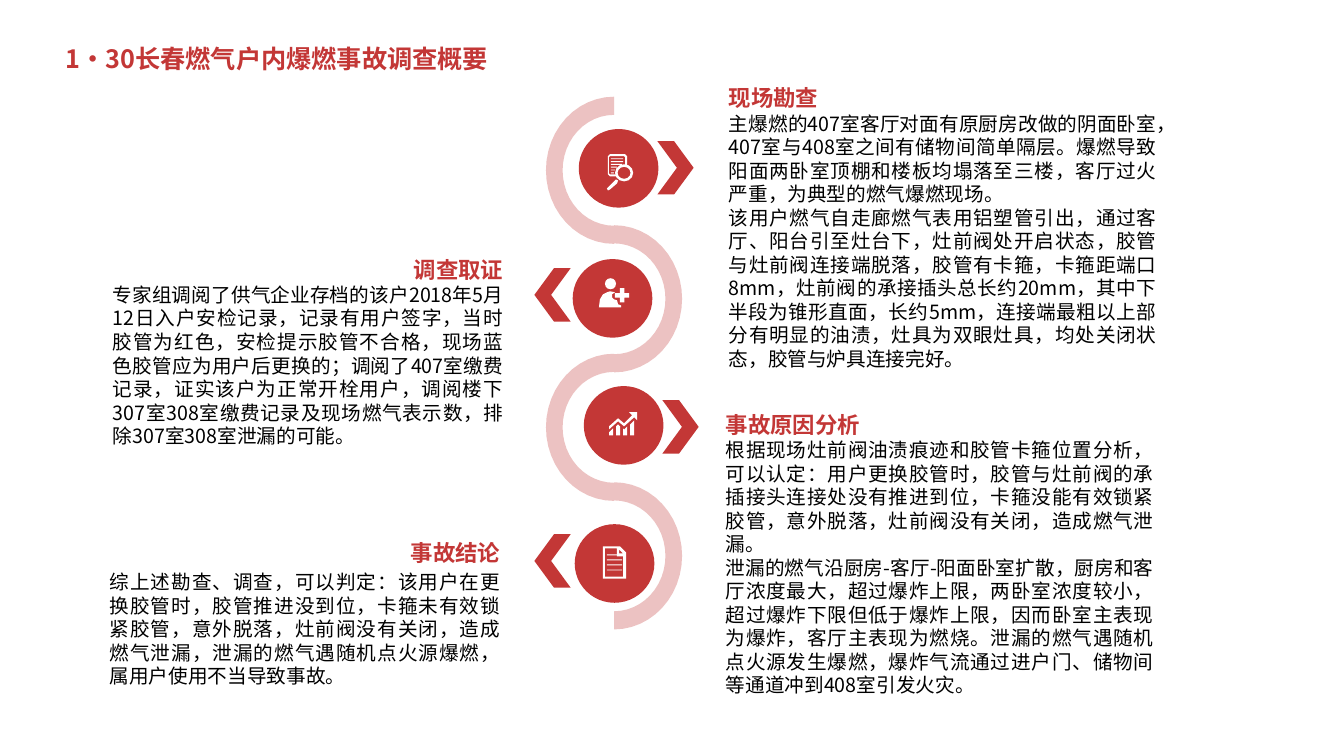
"""Builds a one-page accident investigation summary."""
import math
from dataclasses import dataclass

from lxml import etree
from pptx import Presentation
from pptx import util as u
from pptx.dml.color import RGBColor
from pptx.enum import shapes, text
from pptx.oxml.ns import qn


@dataclass
class Theme:
    """Holds the colours, font and type sizes."""
    red: str = "C33736"
    white: str = "FFFFFF"
    black: str = "000000"
    font: str = "Noto Sans CJK SC"
    title: int = 18
    heading: int = 16
    body: int = 14
    leading: float = 1.2


class SlideBuilder:
    """Draws styled elements on the current slide."""

    def __init__(self, page, theme):
        self.page = page
        self.theme = theme
        self.canvas = page.shapes

    def start_group(self):
        self.canvas = self.page.shapes.add_group_shape().shapes

    def end_group(self):
        self.canvas = self.page.shapes

    def paint(self, shape, color, alpha=None):
        shape.shadow.inherit = False
        shape.line.fill.background()
        shape.fill.solid()
        shape.fill.fore_color.rgb = RGBColor.from_string(color)
        if alpha is not None:
            tint = shape.fill._xPr.find(qn("a:solidFill"))[0]
            etree.SubElement(tint, qn("a:alpha"), val=str(alpha * 1000))

    def preset(self, kind, left, top, width, height, color, adjust=None, turn=0):
        shape = self.canvas.add_shape(kind, *map(u.Inches, (left, top, width, height)))
        if adjust is not None:
            shape.adjustments[0] = adjust
        shape.rotation = turn
        self.paint(shape, color)

    def outline(self, contours, color, alpha=None):
        scaled = [[(u.Inches(x), u.Inches(y)) for x, y in points] for points in contours]
        builder = self.canvas.build_freeform(*scaled[0][0])
        builder.add_line_segments(scaled[0][1:], close=True)
        for points in scaled[1:]:
            builder.move_to(*points[0])
            builder.add_line_segments(points[1:], close=True)
        self.paint(builder.convert_to_shape(), color, alpha)

    def style(self, para, size, color, bold, align):
        para.alignment = align
        para.line_spacing = u.Pt(size * self.theme.leading)
        for span in para.runs:
            span.font.size = u.Pt(size)
            span.font.bold = bold
            span.font.color.rgb = RGBColor.from_string(color)
            span.font.name = self.theme.font
            etree.SubElement(span.font._element, qn("a:ea"), typeface=self.theme.font)

    def text_box(self, left, top, width, height, heading, bodies=(),
                 align=text.PP_ALIGN.LEFT, size=None, before=0, after=0):
        box = self.canvas.add_textbox(*map(u.Inches, (left, top, width, height)))
        frame = box.text_frame
        frame.word_wrap = True
        frame.auto_size = text.MSO_AUTO_SIZE.SHAPE_TO_FIT_TEXT
        frame.text = heading
        self.style(frame.paragraphs[0], size or self.theme.heading,
                   self.theme.red, True, align)
        for body in bodies:
            para = frame.add_paragraph()
            para.text = body
            para.space_before, para.space_after = u.Pt(before), u.Pt(after)
            self.style(para, self.theme.body, self.theme.black, False,
                       text.PP_ALIGN.JUSTIFY)

    def ribbon(self, center_x, first_y, step, bends):
        outer, inner = (0.675, 0.73), (0.51, 0.55)
        edges = []
        for wide_side in (-1, 1):
            edge = []
            for bend in range(bends):
                side = 1 if bend % 2 else -1
                radius_x, radius_y = outer if side == wide_side else inner
                for tick in range(25):
                    angle = math.pi * tick / 24
                    edge.append((center_x + side * radius_x * math.sin(angle),
                                 first_y + step * bend - radius_y * math.cos(angle)))
            edges.append(edge)
        self.outline([edges[0] + edges[1][::-1]], self.theme.red, 30)

    def stage(self, circle, arrow, turn, icon):
        self.start_group()
        self.preset(shapes.MSO_SHAPE.OVAL, *circle, 0.79, 0.78, self.theme.red)
        self.preset(shapes.MSO_SHAPE.CHEVRON, *arrow, 0.36, 0.53,
                    self.theme.red, 0.54, turn)
        icon()
        self.end_group()

    def bars(self, left, tops, widths, height):
        for top, width in zip(tops, widths):
            self.preset(shapes.MSO_SHAPE.RECTANGLE, left, top, width, height,
                        self.theme.white)

    def search_icon(self):
        white = self.theme.white
        self.bars(6.06, [1.57 + 0.028 * row for row in range(6)],
                  (0.12, 0.12, 0.11, 0.06, 0.04, 0.03), 0.01)
        self.preset(shapes.MSO_SHAPE.DONUT, 6.1, 1.63, 0.18, 0.17, white, 0.15)
        self.outline([[(6.1, 1.79), (6.11, 1.78), (6.13, 1.79), (6.12, 1.82),
                       (6.05, 1.88), (6.03, 1.89), (6.02, 1.87)]], white)
        self.outline([[(6.12, 1.73), (6.05, 1.73), (6.04, 1.72), (6.04, 1.56),
                       (6.05, 1.55), (6.19, 1.55), (6.2, 1.56), (6.2, 1.65),
                       (6.22, 1.65), (6.22, 1.55), (6.2, 1.53), (6.05, 1.53),
                       (6.03, 1.55), (6.03, 1.73), (6.05, 1.75), (6.12, 1.75)]], white)

    def person_icon(self):
        white = self.theme.white
        self.preset(shapes.MSO_SHAPE.CROSS, 6.1, 2.86, 0.14, 0.14, white, 0.34)
        self.preset(shapes.MSO_SHAPE.OVAL, 6, 2.76, 0.11, 0.11, white)
        self.outline([[(5.94, 3.05), (5.95, 2.97), (5.98, 2.92), (6.02, 2.9),
                       (6.05, 2.89), (6.1, 2.9), (6.07, 2.92), (6.07, 2.95),
                       (6.09, 2.97), (6.12, 2.98), (6.13, 3.02), (6.16, 3.03),
                       (6.16, 3.05)]], white)

    def chart_icon(self):
        base = 4.32
        self.outline([
            [(6.04, base), (6.08, base), (6.08, 4.25), (6.04, 4.29)],
            [(6.11, base), (6.15, base), (6.15, 4.23), (6.13, 4.21), (6.11, 4.23)],
            [(6.18, base), (6.22, base), (6.22, 4.23), (6.19, 4.26), (6.18, 4.25)],
            [(6.25, base), (6.29, base), (6.29, 4.17), (6.25, 4.21)],
        ], self.theme.white)
        self.outline([[(6.32, 4.09), (6.24, 4.09), (6.27, 4.12), (6.19, 4.2),
                       (6.13, 4.15), (6.04, 4.23), (6.04, 4.26), (6.13, 4.18),
                       (6.19, 4.23), (6.29, 4.14), (6.32, 4.17)]], self.theme.white)

    def document_icon(self):
        self.outline([
            [(6.21, 5.48), (6.15, 5.42), (5.98, 5.42), (5.98, 5.74), (6.21, 5.74)],
            [(6.18, 5.49), (6.14, 5.49), (6.14, 5.45)],
            [(6.18, 5.72), (6, 5.72), (6, 5.44), (6.12, 5.44), (6.12, 5.52), (6.18, 5.52)],
        ], self.theme.white)
        self.bars(6.02, [5.5 + 0.05 * row for row in range(4)], [0.15] * 4, 0.01)


SCENE = [
    "主爆燃的407室客厅对面有原厨房改做的阴面卧室，407室与408室之间有储物间简单隔层。爆燃导致阳面两卧室顶棚和楼板均塌落至三楼，客厅过火严重，为典型的燃气爆燃现场。",
    "该用户燃气自走廊燃气表用铝塑管引出，通过客厅、阳台引至灶台下，灶前阀处开启状态，胶管与灶前阀连接端脱落，胶管有卡箍，卡箍距端口8mm，灶前阀的承接插头总长约20mm，其中下半段为锥形直面，长约5mm，连接端最粗以上部分有明显的油渍，灶具为双眼灶具，均处关闭状态，胶管与炉具连接完好。",
]
EVIDENCE = [
    "专家组调阅了供气企业存档的该户2018年5月12日入户安检记录，记录有用户签字，当时胶管为红色，安检提示胶管不合格，现场蓝色胶管应为用户后更换的；调阅了407室缴费记录，证实该户为正常开栓用户，调阅楼下307室308室缴费记录及现场燃气表示数，排除307室308室泄漏的可能。",
]
CONCLUSION = [
    "综上述勘查、调查，可以判定：该用户在更换胶管时，胶管推进没到位，卡箍未有效锁紧胶管，意外脱落，灶前阀没有关闭，造成燃气泄漏，泄漏的燃气遇随机点火源爆燃，属用户使用不当导致事故。",
]
CAUSE = [
    "根据现场灶前阀油渍痕迹和胶管卡箍位置分析，可以认定：用户更换胶管时，胶管与灶前阀的承插接头连接处没有推进到位，卡箍没能有效锁紧胶管，意外脱落，灶前阀没有关闭，造成燃气泄漏。",
    "泄漏的燃气沿厨房-客厅-阳面卧室扩散，厨房和客厅浓度最大，超过爆炸上限，两卧室浓度较小，超过爆炸下限但低于爆炸上限，因而卧室主表现为爆炸，客厅主表现为燃烧。泄漏的燃气遇随机点火源发生爆燃，爆炸气流通过进户门、储物间等通道冲到408室引发火灾。",
]


def main():
    deck = Presentation()
    deck.slide_width, deck.slide_height = u.Inches(13.33), u.Inches(7.5)
    page = deck.slides.add_slide(deck.slide_layouts[6])
    theme = Theme()
    builder = SlideBuilder(page, theme)
    right = text.PP_ALIGN.RIGHT

    builder.text_box(0.55, 0.38, 4.78, 0.4, "1·30长春燃气户内爆燃事故调查概要",
                     size=theme.title)
    builder.ribbon(6.09, 1.69, 1.275, 4)
    builder.stage((5.68, 2.57), (5.3, 2.66), 180, builder.person_icon)
    builder.stage((5.74, 1.28), (6.52, 1.4), 0, builder.search_icon)
    builder.stage((5.79, 3.83), (6.57, 3.97), 0, builder.chart_icon)
    builder.stage((5.7, 5.2), (5.3, 5.3), 180, builder.document_icon)
    builder.text_box(7.13, 0.79, 4.44, 2.96, "现场勘查", SCENE)
    builder.text_box(1.02, 2.49, 4.07, 2.02, "调查取证", EVIDENCE, right)
    builder.text_box(0.99, 5.3, 4.07, 1.6, "事故结论", CONCLUSION, right,
                     before=3, after=6)
    builder.text_box(7.1, 4.03, 4.44, 2.96, "事故原因分析", CAUSE,
                     text.PP_ALIGN.JUSTIFY)
    deck.save("out.pptx")


if __name__ == "__main__":
    main()
